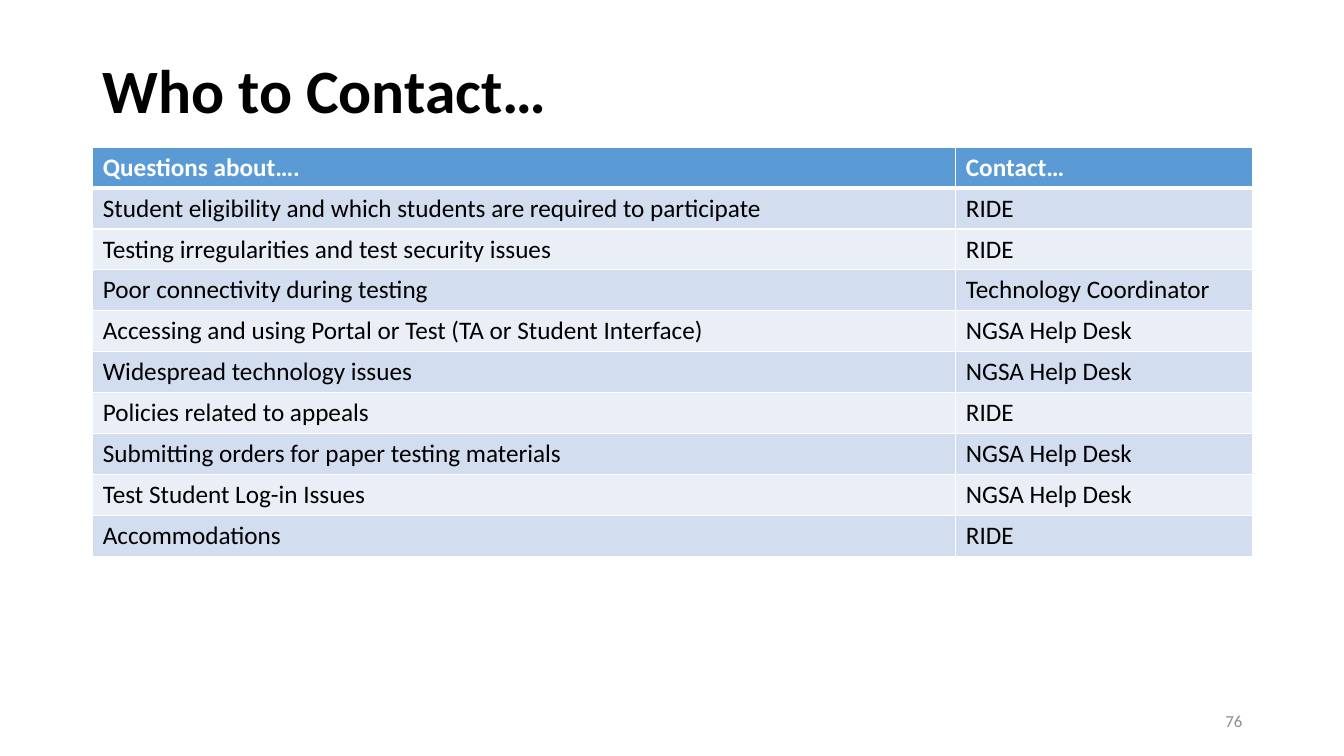
"""Build the contact table slide."""
from lxml.etree import SubElement
from pptx import Presentation
from pptx.dml.color import RGBColor
from pptx.enum.text import MSO_ANCHOR, PP_ALIGN
from pptx.oxml.ns import qn
from pptx.util import Inches, Pt


def paint(color, tone):
    color.rgb = RGBColor.from_string(tone)


def write(frame, text, size=18, tone="000000", bold=False,
          align=PP_ALIGN.LEFT, anchor=MSO_ANCHOR.TOP, space=1.0):
    frame.word_wrap = True
    frame.vertical_anchor = anchor
    para = frame.paragraphs[0]
    para.alignment = align
    para.line_spacing = space
    run = para.add_run()
    run.text = text
    run.font.name = "Calibri"
    run.font.size = Pt(size)
    run.font.bold = bold
    paint(run.font.color, tone)


deck = Presentation()
deck.slide_width, deck.slide_height = Inches(13.33), Inches(7.5)
slide = deck.slides.add_slide(deck.slide_layouts[6])
shapes = slide.shapes

left, top, wide = Inches(0.92), Inches(1.46), Inches(11.5)
title = shapes.add_textbox(left, Inches(0.4), wide, top - Inches(0.4))
write(title.text_frame, "Who to Contact…", size=44, bold=True,
      anchor=MSO_ANCHOR.MIDDLE, space=0.9)

side = Inches(3)
number = shapes.add_textbox(left + wide - side, Inches(6.95), side, Inches(0.4))
write(number.text_frame, "76", size=12, tone="8C8C8C",
      align=PP_ALIGN.RIGHT, anchor=MSO_ANCHOR.MIDDLE)

rows = [
    ("Questions about….", "Contact…"),
    ("Student eligibility and which students are required to participate", "RIDE"),
    ("Testing irregularities and test security issues", "RIDE"),
    ("Poor connectivity during testing", "Technology Coordinator"),
    ("Accessing and using Portal or Test (TA or Student Interface)", "NGSA Help Desk"),
    ("Widespread technology issues", "NGSA Help Desk"),
    ("Policies related to appeals", "RIDE"),
    ("Submitting orders for paper testing materials", "NGSA Help Desk"),
    ("Test Student Log-in Issues", "NGSA Help Desk"),
    ("Accommodations", "RIDE"),
]
table = shapes.add_table(len(rows), 2, left, top, wide, Inches(4.06)).table
table.columns[0].width = Inches(8.56)
table.columns[1].width = wide - Inches(8.56)

for r, row in enumerate(rows):
    head = r == 0
    tone = "5B9BD5" if head else ("EAEFF7", "D2DEEF")[r % 2]
    for c, text in enumerate(row):
        cell = table.cell(r, c)
        write(cell.text_frame, text, bold=head, tone="FFFFFF" if head else "000000")
        props = cell._tc.get_or_add_tcPr()
        for edge in "LRTB":
            thick = 3 if (r, edge) in ((0, "B"), (1, "T")) else 1
            line = SubElement(props, qn(f"a:ln{edge}"), w=str(Pt(thick)))
            SubElement(SubElement(line, qn("a:solidFill")), qn("a:srgbClr"), val="FFFFFF")
        cell.fill.solid()
        paint(cell.fill.fore_color, tone)

deck.save("out.pptx")
